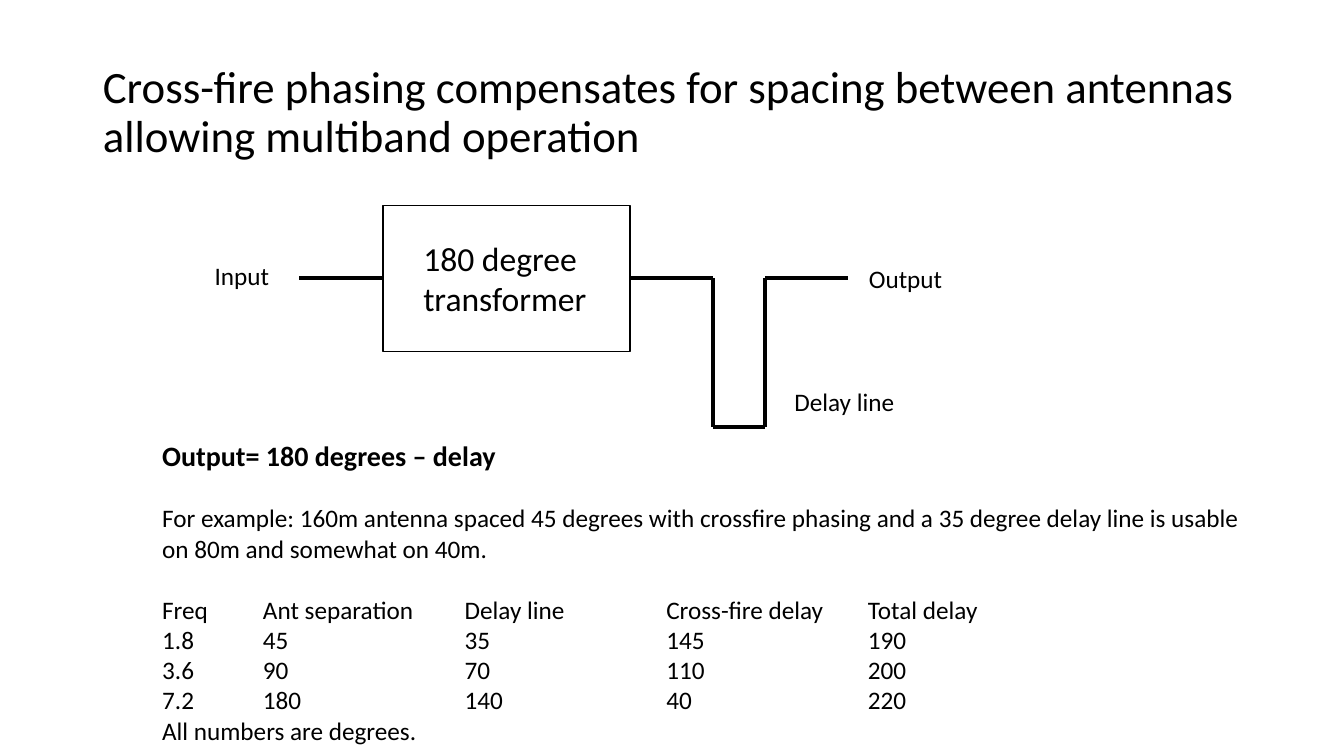
import itertools

import pptx
import pptx.dml.color
import pptx.enum.shapes
import pptx.enum.text
import pptx.oxml.ns
import pptx.util
from lxml import etree

EMU_PER_PX = 9144
FONT = "Calibri"
BLACK = "000000"
LABEL_SIZE = 18
COLUMN_STOPS = (100, 300, 500, 700)
DELAY_ROWS = (
    ("Freq", "Ant separation", "Delay line", "Cross-fire delay", "Total delay"),
    ("1.8", "45", "35", "145", "190"),
    ("3.6", "90", "70", "110", "200"),
    ("7.2", "180", "140", "40", "220"),
)


def px(length):
    """Turn a length in px into EMU."""
    return pptx.util.Emu(length * EMU_PER_PX)


def color(hex_string):
    """Turn a hex string into a colour."""
    return pptx.dml.color.RGBColor.from_string(hex_string)


def style_paragraph(paragraph, size, bold=False):
    """Set the font of a whole paragraph."""
    paragraph.font.name = FONT
    paragraph.font.size = pptx.util.Pt(size)
    paragraph.font.bold = bold
    paragraph.font.color.rgb = color(BLACK)


def add_text(slide, box, lines, size):
    """Add an unwrapped text box with one paragraph a line."""
    text_frame = slide.shapes.add_textbox(*map(px, box)).text_frame
    text_frame.word_wrap = False
    text_frame.text = "\n".join(lines)
    for paragraph in text_frame.paragraphs:
        style_paragraph(paragraph, size)
    return text_frame


def add_wire(slide, points):
    """Join the points with straight black connectors."""
    for start, end in itertools.pairwise(points):
        connector = slide.shapes.add_connector(
            pptx.enum.shapes.MSO_CONNECTOR.STRAIGHT, *map(px, start + end))
        connector.line.color.rgb = color(BLACK)
        connector.line.width = pptx.util.Pt(3)
        properties = connector._element.spPr
        etree.SubElement(properties, pptx.oxml.ns.qn("a:effectLst"))


def set_tab_stops(paragraph, stops):
    """Give a paragraph left tab stops at the given px."""
    properties = paragraph._p.get_or_add_pPr()
    tab_list = etree.Element(pptx.oxml.ns.qn("a:tabLst"))
    for stop in stops:
        etree.SubElement(tab_list, pptx.oxml.ns.qn("a:tab"), pos=str(px(stop)), algn="l")
    default_run = properties.find(pptx.oxml.ns.qn("a:defRPr"))
    default_run.addprevious(tab_list)


def fill_title(slide, box):
    """Place and format the slide title."""
    title = slide.shapes.title
    title.left, title.top, title.width, title.height = map(px, box)
    text_frame = title.text_frame
    text_frame.text = ("Cross-fire phasing compensates for spacing between antennas "
                       "allowing multiband operation")
    text_frame.auto_size = pptx.enum.text.MSO_AUTO_SIZE.NONE
    text_frame.vertical_anchor = pptx.enum.text.MSO_ANCHOR.MIDDLE
    paragraph = text_frame.paragraphs[0]
    paragraph.alignment = pptx.enum.text.PP_ALIGN.LEFT
    paragraph.line_spacing = 0.9
    style_paragraph(paragraph, 32)


def draw_circuit(slide, box):
    """Draw the transformer, its wires, the delay loop and their labels."""
    left, top, width, height = box
    transformer_left, transformer_right = left + 177, left + 422
    loop_left, loop_right = left + 504, left + 556
    wire_y, loop_bottom = top + 72, top + height

    transformer = slide.shapes.add_shape(
        pptx.enum.shapes.MSO_SHAPE.RECTANGLE,
        px(transformer_left), px(top), px(transformer_right - transformer_left), px(145))
    transformer.shadow.inherit = False
    transformer.fill.background()
    transformer.line.color.rgb = color(BLACK)
    transformer.line.width = pptx.util.Pt(1)
    add_text(slide, (transformer_left + 30, top + 27, 184, 91),
             ("180 degree", "transformer"), 24)

    add_wire(slide, ((left + 94, wire_y), (transformer_left, wire_y)))
    add_wire(slide, ((transformer_right, wire_y), (loop_left, wire_y),
                     (loop_left, loop_bottom), (loop_right, loop_bottom),
                     (loop_right, wire_y), (left + width - 105, wire_y)))

    labels = (("Input", 0, 49, 75), ("Output", 649, 52, 94), ("Delay line", 575, 174, 121))
    for label, x, y, label_width in labels:
        add_text(slide, (left + x, top + y, label_width, 40), (label,), LABEL_SIZE)


def write_example(slide, box):
    """Write the formula, the worked example and the tabbed delay figures."""
    lines = (
        "Output= 180 degrees – delay",
        "For example: 160m antenna spaced 45 degrees with crossfire phasing "
        "and a 35 degree delay line is usable",
        "on 80m and somewhat on 40m.",
        *("\t".join(row) for row in DELAY_ROWS),
        "All numbers are degrees.",
    )
    formula, example, _, *rows, _ = add_text(slide, box, lines, LABEL_SIZE).paragraphs
    style_paragraph(formula, 20, bold=True)
    for paragraph in (example, rows[0]):
        paragraph.space_before = pptx.util.Pt(22)
    for paragraph in rows:
        set_tab_stops(paragraph, COLUMN_STOPS)


def main():
    """Build the slide and save it."""
    presentation = pptx.Presentation()
    presentation.slide_width, presentation.slide_height = px(1333), px(750)
    slide = presentation.slides.add_slide(presentation.slide_layouts.get_by_name("Title Only"))
    fill_title(slide, (92, 40, 1150, 145))
    draw_circuit(slide, (203, 204, 743, 220))
    write_example(slide, (151, 430, 1112, 316))
    presentation.save("out.pptx")


if __name__ == "__main__":
    main()
